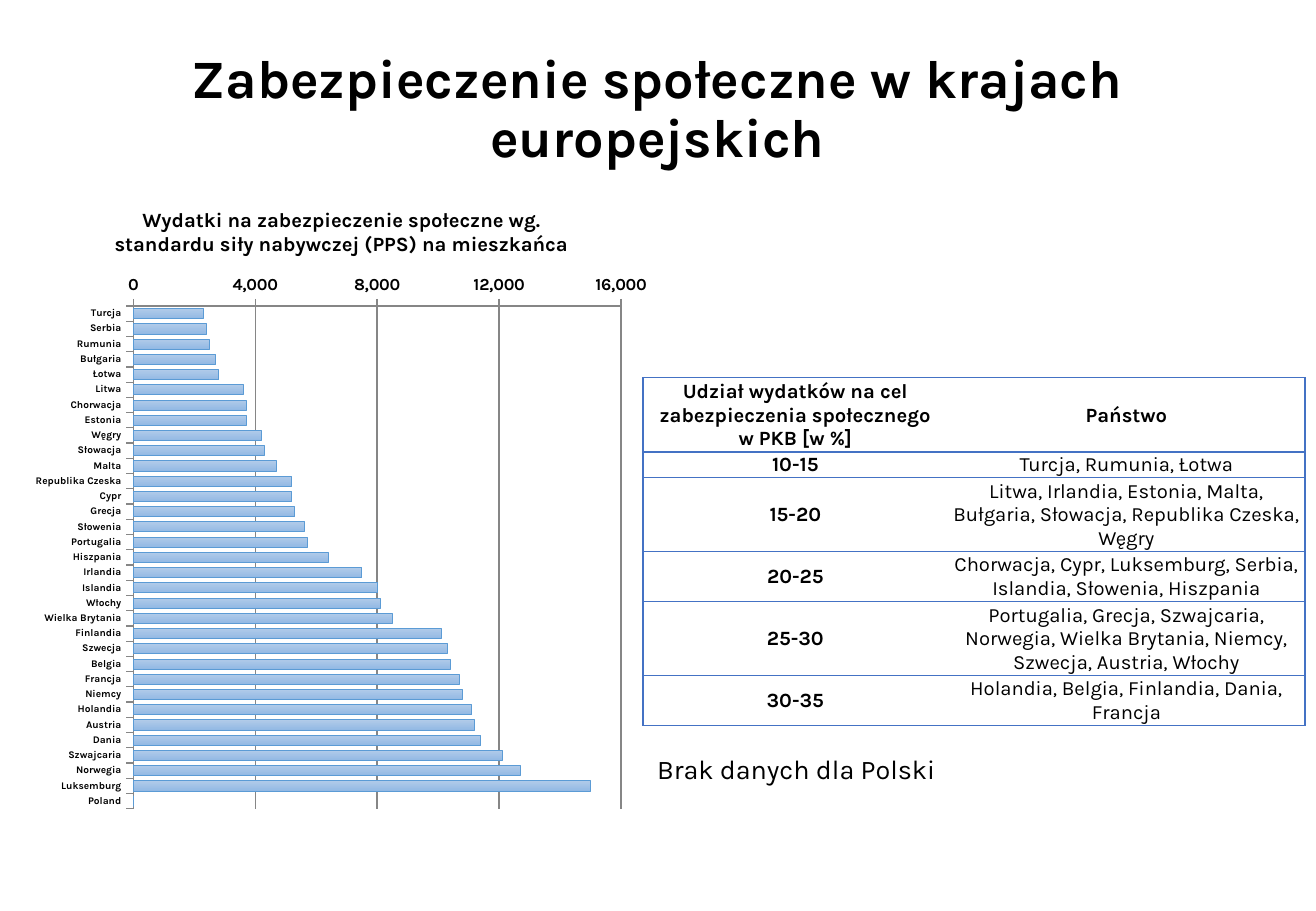
from lxml import etree
from pptx import Presentation
from pptx.chart.data import CategoryChartData
from pptx.dml.color import RGBColor
from pptx.enum.chart import XL_CHART_TYPE, XL_TICK_MARK
from pptx.enum.text import MSO_ANCHOR, PP_ALIGN
from pptx.oxml import parse_xml
from pptx.oxml.ns import nsdecls, qn
from pptx.util import Inches, Pt

CENTER = PP_ALIGN.CENTER
MIDDLE = MSO_ANCHOR.MIDDLE
BAR_CLUSTERED = XL_CHART_TYPE.BAR_CLUSTERED
TICK_OUTSIDE = XL_TICK_MARK.OUTSIDE
BLACK, WHITE, BORDER, GRID = "000000", "FFFFFF", "4472C4", "868686"


def color(value):
    return RGBColor.from_string(value)


def style_font(font, size, bold):
    for name, value in {"name": "Karla", "size": Pt(size), "bold": bold}.items():
        setattr(font, name, value)
    font.color.rgb = color(BLACK)


presentation = Presentation()
presentation.slide_width = Inches(10.83)
presentation.slide_height = Inches(7.5)
slide = presentation.slides.add_slide(presentation.slide_layouts[6])

texts = [
    ("Zabezpieczenie społeczne w krajach europejskich", (0.74, 0.4, 9.34, 1.02),
     32, True, {"alignment": CENTER, "line_spacing": 0.9}),
    ("Brak danych dla Polski", (5.31, 6.14, 5.45, 0.37), 16, False, {}),
]
for text, box, size, bold, formats in texts:
    frame = slide.shapes.add_textbox(*map(Inches, box)).text_frame
    frame.word_wrap = True
    frame.vertical_anchor = MIDDLE
    paragraph = frame.paragraphs[0]
    paragraph.text = text
    for name, value in formats.items():
        setattr(paragraph, name, value)
    style_font(paragraph.runs[0].font, size, bold)

shares = [
    ("Udział wydatków na cel zabezpieczenia społecznego\vw PKB [w %]", "Państwo", 0.59),
    ("10-15", "Turcja, Rumunia, Łotwa", 0.2),
    ("15-20", "Litwa, Irlandia, Estonia, Malta, Bułgaria, Słowacja, Republika Czeska, Węgry", 0.59),
    ("20-25", "Chorwacja, Cypr, Luksemburg, Serbia, Islandia, Słowenia, Hiszpania", 0.4),
    ("25-30", "Portugalia, Grecja, Szwajcaria, Norwegia, Wielka Brytania, Niemcy, "
              "Szwecja, Austria, Włochy", 0.59),
    ("30-35", "Holandia, Belgia, Finlandia, Dania, Francja", 0.4),
]
table = slide.shapes.add_table(
    len(shares), 2, Inches(5.29), Inches(3.11), Inches(5.45), Inches(2.77)).table
for column, width in zip(table.columns, (2.51, 2.94)):
    column.width = Inches(width)
cell_formats = {
    "margin_left": Inches(0.01), "margin_right": Inches(0.01),
    "margin_top": Inches(0.01), "margin_bottom": 0, "vertical_anchor": MIDDLE,
}
for row_index, (share, countries, height) in enumerate(shares):
    table.rows[row_index].height = Inches(height)
    for column_index, text in enumerate((share, countries)):
        cell = table.cell(row_index, column_index)
        cell.text = text
        for name, value in cell_formats.items():
            setattr(cell, name, value)
        paragraph = cell.text_frame.paragraphs[0]
        paragraph.alignment = CENTER
        for run in paragraph.runs:
            style_font(run.font, 12, row_index == 0 or column_index == 0)
        properties = cell._tc.get_or_add_tcPr()
        inner_side = "R" if column_index == 0 else "L"
        for side in "LRTB":
            line = etree.SubElement(properties, qn(f"a:ln{side}"), w=str(Pt(1)))
            if side == inner_side:
                etree.SubElement(line, qn("a:noFill"))
            else:
                fill = etree.SubElement(line, qn("a:solidFill"))
                etree.SubElement(fill, qn("a:srgbClr"), val=BORDER)
        cell.fill.solid()
        cell.fill.fore_color.rgb = color(WHITE)

spending = {
    "Turcja": 2300, "Serbia": 2400, "Rumunia": 2500, "Bułgaria": 2700, "Łotwa": 2800,
    "Litwa": 3600, "Chorwacja": 3700, "Estonia": 3700, "Węgry": 4200, "Słowacja": 4300,
    "Malta": 4700, "Republika Czeska": 5200, "Cypr": 5200, "Grecja": 5300,
    "Słowenia": 5600, "Portugalia": 5700, "Hiszpania": 6400, "Irlandia": 7500,
    "Islandia": 8000, "Włochy": 8100, "Wielka Brytania": 8500, "Finlandia": 10100,
    "Szwecja": 10300, "Belgia": 10400, "Francja": 10700, "Niemcy": 10800,
    "Holandia": 11100, "Austria": 11200, "Dania": 11400, "Szwajcaria": 12100,
    "Norwegia": 12700, "Luksemburg": 15000, "Poland": 0,
}
chart_title = ("Wydatki na zabezpieczenie społeczne wg. "
               "standardu siły nabywczej (PPS) na mieszkańca")
chart_data = CategoryChartData()
chart_data.categories = list(spending)
chart_data.add_series(chart_title, list(spending.values()))
chart = slide.shapes.add_chart(
    BAR_CLUSTERED, Inches(0.19), Inches(1.51), Inches(5.24), Inches(5.26), chart_data).chart
chart.has_legend = False
style_font(chart.font, 11, False)
chart.has_title = True
title_paragraph = chart.chart_title.text_frame.paragraphs[0]
title_paragraph.text = chart_title
style_font(title_paragraph.runs[0].font, 12, True)
chart.chart_title.include_in_layout = False

category_axis, value_axis = chart.category_axis, chart.value_axis
for axis, size in ((category_axis, 6), (value_axis, 10)):
    axis.major_tick_mark = TICK_OUTSIDE
    style_font(axis.tick_labels.font, size, True)
    axis.format.line.color.rgb = color(GRID)
    axis.format.line.width = Pt(0.75)
category_axis.reverse_order = True
for name, value in {"minimum_scale": 0, "maximum_scale": 16000, "major_unit": 4000}.items():
    setattr(value_axis, name, value)
value_axis.tick_labels.number_format = "#,##0"
value_axis.tick_labels.number_format_is_linked = False
value_axis.major_gridlines.format.line.color.rgb = color(GRID)
value_axis.major_gridlines.format.line.width = Pt(0.75)

plot = chart.plots[0]
for name, value in {"gap_width": 50, "overlap": 10, "vary_by_categories": False}.items():
    setattr(plot, name, value)
bars = plot.series[0].format
bars.fill.gradient()
bars.fill.gradient_angle = 270
for stop, value in zip(bars.fill.gradient_stops, ("B1CBE9", "93B9E4")):
    stop.color.rgb = color(value)
bars.line.color.rgb = color("5B9BD5")
bars.line.width = Pt(0.5)

plot_area = chart._chartSpace.chart.plotArea
for layout in plot_area.findall(qn("c:layout")):
    plot_area.remove(layout)
plot_area.insert(0, parse_xml(
    f'<c:layout {nsdecls("c")}><c:manualLayout><c:layoutTarget val="inner"/>'
    '<c:xMode val="edge"/><c:yMode val="edge"/>'
    '<c:x val="0.173"/><c:y val="0.192"/><c:w val="0.766"/><c:h val="0.787"/>'
    '</c:manualLayout></c:layout>'))

presentation.save("out.pptx")
